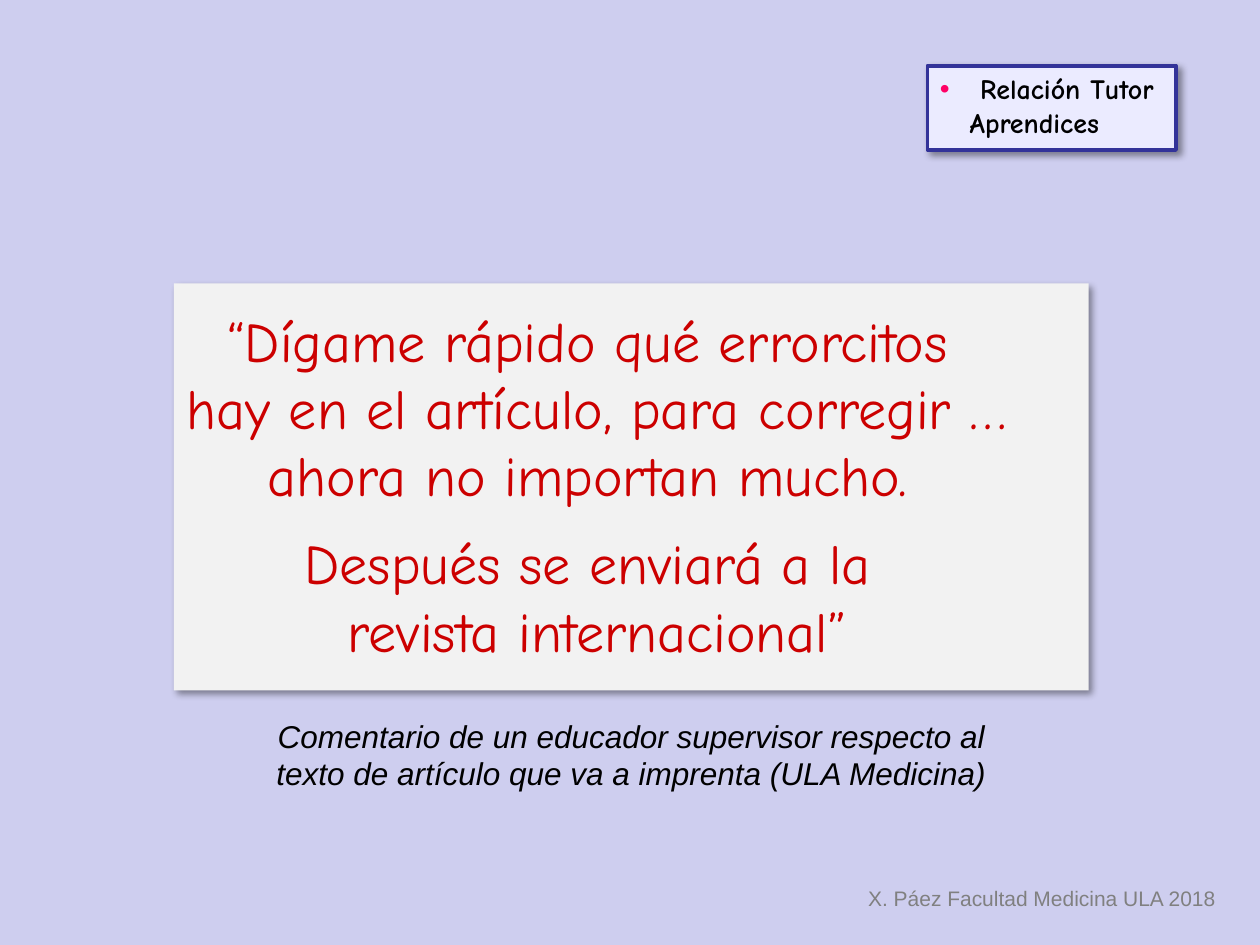
import pptx
import pptx.dml.color
import pptx.enum.shapes
import pptx.enum.text
import pptx.oxml
import pptx.oxml.ns
import pptx.util

Pt = pptx.util.Pt
RGBColor = pptx.dml.color.RGBColor
ALIGN = pptx.enum.text.PP_ALIGN

LAVENDER = RGBColor(0xCE, 0xCE, 0xEF)
PALE_GRAY = RGBColor(0xF2, 0xF2, 0xF2)
PALE_BLUE = RGBColor(0xEB, 0xEB, 0xFF)
NAVY = RGBColor(0x33, 0x33, 0x99)
RED = RGBColor(0xCC, 0x00, 0x00)
PINK = RGBColor(0xFF, 0x00, 0x66)
GRAY = RGBColor(0x80, 0x80, 0x80)
BLACK = RGBColor(0x00, 0x00, 0x00)
HAND_FONT = "Comic Neue"
PLAIN_FONT = "Arial"


class SlideBuilder:
    """Holds the style and the current slide, and adds each kind of element."""

    def __init__(self, presentation):
        self.slide = presentation.slides.add_slide(presentation.slide_layouts[6])
        self.slide.background.fill.solid()
        self.slide.background.fill.fore_color.rgb = LAVENDER

    def panel(self, left, top, width, height, color, line=None):
        shape = self.slide.shapes.add_shape(
            pptx.enum.shapes.MSO_SHAPE.RECTANGLE,
            Pt(left), Pt(top), Pt(width), Pt(height))
        shape.fill.solid()
        shape.fill.fore_color.rgb = color
        if line is None:
            shape.line.fill.background()
        else:
            shape.line.color.rgb = line
            shape.line.width = Pt(2.25)
        self.add_shadow(shape)
        shape.text_frame.word_wrap = True
        shape.text_frame.vertical_anchor = pptx.enum.text.MSO_ANCHOR.TOP
        return shape.text_frame

    def add_shadow(self, shape):
        shape.shadow.inherit = False
        effects = shape._element.spPr.find(pptx.oxml.ns.qn("a:effectLst"))
        effects.append(pptx.oxml.parse_xml(
            f'<a:outerShdw {pptx.oxml.ns.nsdecls("a")} blurRad="{Pt(4)}" '
            f'dist="{Pt(3)}" dir="2700000" algn="tl" rotWithShape="0">'
            '<a:srgbClr val="000000"><a:alpha val="40000"/></a:srgbClr>'
            '</a:outerShdw>'))

    def text_box(self, left, top, width, height):
        box = self.slide.shapes.add_textbox(
            Pt(left), Pt(top), Pt(width), Pt(height))
        box.text_frame.word_wrap = False
        return box.text_frame

    def add_lines(self, frame, lines, size, font, color, align=ALIGN.LEFT,
                  bold=False, italic=False):
        for index, line in enumerate(lines):
            paragraph = frame.add_paragraph() if index else frame.paragraphs[0]
            paragraph.alignment = align
            run = paragraph.add_run()
            run.text = line
            run.font.size = Pt(size)
            run.font.name = font
            run.font.color.rgb = color
            run.font.bold = bold
            run.font.italic = italic

    def indent(self, paragraph, margin, bullet_color=None):
        properties = paragraph._p.get_or_add_pPr()
        properties.set("marL", str(Pt(margin)))
        properties.set("indent", str(-Pt(margin) if bullet_color else 0))
        if bullet_color:
            namespace = pptx.oxml.ns.nsdecls("a")
            for element in (
                    f'<a:buClr {namespace}><a:srgbClr val="{bullet_color}"/></a:buClr>',
                    f'<a:buFont {namespace} typeface="{PLAIN_FONT}"/>',
                    f'<a:buChar {namespace} char="•"/>'):
                properties.append(pptx.oxml.parse_xml(element))


def main():
    presentation = pptx.Presentation()
    presentation.slide_width, presentation.slide_height = Pt(720), Pt(540)
    builder = SlideBuilder(presentation)

    quote = builder.panel(99.4, 162, 522.7, 232.6, PALE_GRAY)
    quote.margin_left, quote.margin_right, quote.margin_top = Pt(2), Pt(41), Pt(13)
    builder.add_lines(quote, [
        "“Dígame rápido qué errorcitos ",
        "hay en el artículo, para corregir …",
        "ahora no importan mucho. ",
        "Después se enviará a la ",
        "revista internacional”",
    ], 32, HAND_FONT, RED, ALIGN.CENTER)
    quote.paragraphs[3].space_before = Pt(12)

    caption = builder.text_box(150.5, 406, 420.5, 50.4)
    builder.add_lines(caption, [
        "Comentario de un educador supervisor respecto al",
        "texto de artículo que va a imprenta (ULA Medicina)",
    ], 18, PLAIN_FONT, BLACK, ALIGN.CENTER, italic=True)

    topic = builder.panel(530, 37.5, 142, 48.2, PALE_BLUE, NAVY)
    builder.add_lines(topic, ["Relación Tutor", "Aprendices"],
                      16, HAND_FONT, BLACK, bold=True)
    builder.indent(topic.paragraphs[0], 23, PINK)
    builder.indent(topic.paragraphs[1], 17)

    footer = builder.text_box(489, 502.5, 220.3, 21.6)
    builder.add_lines(footer, ["X. Páez Facultad Medicina ULA 2018"],
                      12, PLAIN_FONT, GRAY)

    presentation.save("out.pptx")


if __name__ == "__main__":
    main()
